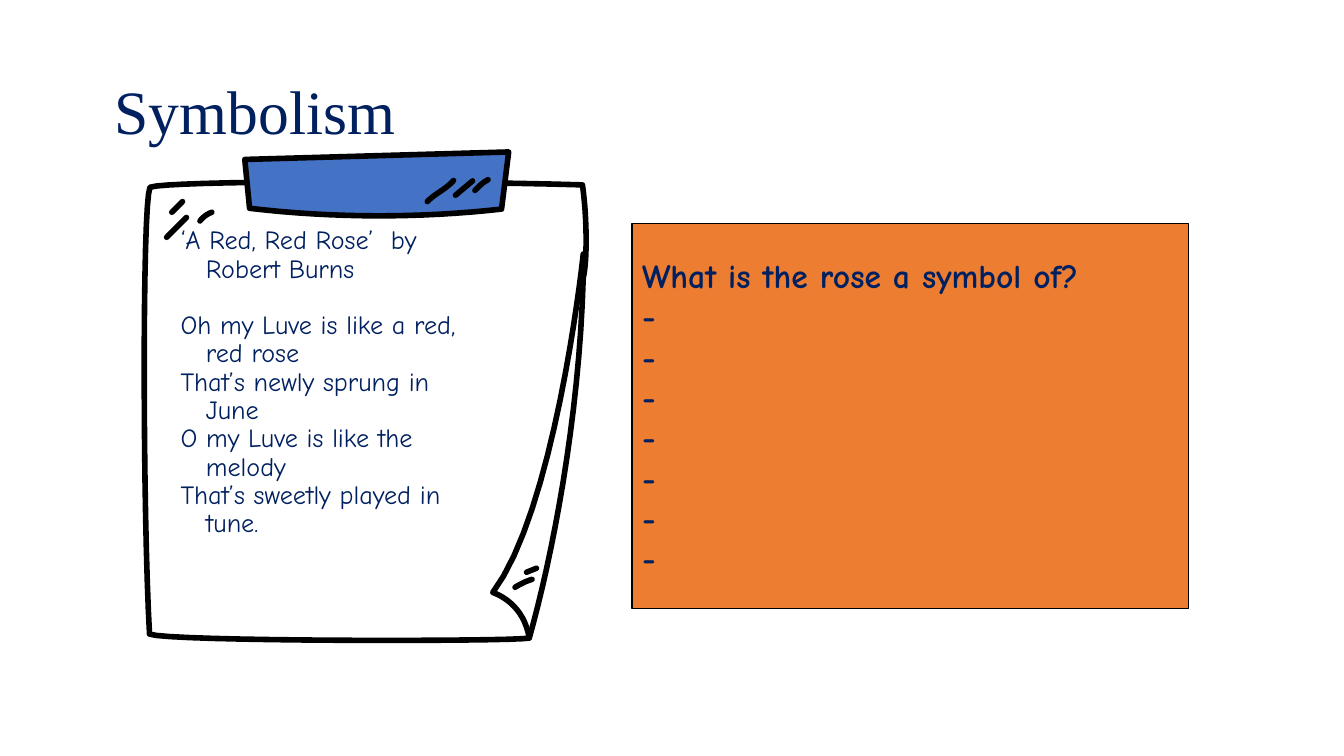
from lxml.etree import SubElement
from pptx import Presentation
from pptx.dml.color import RGBColor
from pptx.enum.shapes import MSO_SHAPE
from pptx.enum.text import MSO_ANCHOR, PP_ALIGN
from pptx.oxml.ns import qn
from pptx.util import Cm, Pt

NAVY = RGBColor(0x00, 0x20, 0x60)
BLUE = RGBColor(0x44, 0x72, 0xC4)
ORANGE = RGBColor(0xED, 0x7D, 0x31)
BLACK = RGBColor(0x00, 0x00, 0x00)

TITLE_FONT = "Times New Roman"
BODY_FONT = "Comic Neue"
CURVE_STEPS = 16
ANSWER_LINES = 7

POEM_HEADING = "‘A Red, Red Rose’  by Robert Burns"
POEM_LINES = [
    "Oh my Luve is like a red, red rose",
    "That’s newly sprung in June",
    "O my Luve is like the melody",
    "That’s sweetly played in tune.",
]

# Outlines in centimetres: a start point, then one end point per straight
# segment or two control points and an end point per curve.
PAPER = [
    (3.78, 4.72),
    [(3.58, 5.2), (3.6, 13), (3.77, 15.98)],
    [(4.2, 16.17), (12.9, 16.17), (13.34, 16.08)],
    [(13.9, 14.1), (14.6, 10.6), (14.7, 7)],
    [(14.8, 6.6), (14.8, 5.5), (14.68, 4.66)],
    [(11, 4.55), (4.2, 4.55), (3.78, 4.72)],
]
CURL = [
    (14.7, 6.4),
    [(14.65, 6.9), (13.95, 12.9), (12.42, 14.93)],
    [(12.6, 15), (13.2, 15.25), (13.34, 16.08)],
]
TAPE = [
    (6.17, 4.02),
    [(12.82, 3.83)],
    [(12.64, 5.27)],
    [(10.6, 5.5), (8.4, 5.5), (6.29, 5.25)],
]
GLINTS = [
    [(4.6, 5.08), [(4.33, 5.35)]],
    [(4.7, 5.48), [(4.2, 5.98)]],
    [(5.34, 5.35), [(5.2, 5.4), (5.1, 5.49), (5.04, 5.57)]],
    [(11.43, 4.55), [(11.2, 4.8), (11, 4.85), (10.77, 5.08)]],
    [(11.91, 4.56), [(11.48, 4.92)]],
    [(12.3, 4.53), [(12.15, 4.61), (12.08, 4.69), (11.97, 4.8)]],
    [(13.52, 14.32), [(13.27, 14.42)]],
    [(13.41, 14.6), [(13.25, 14.65), (13.15, 14.7), (12.98, 14.8)]],
]


def curve_points(start, controls):
    """Points along a cubic Bezier curve, without its start."""
    points = [start, *controls]
    weights = []
    for step in range(1, CURVE_STEPS + 1):
        t = step / CURVE_STEPS
        u = 1 - t
        weights.append((u**3, 3 * u * u * t, 3 * u * t * t, t**3))
    return [
        tuple(sum(w * point[axis] for w, point in zip(row, points)) for axis in (0, 1))
        for row in weights
    ]


def trace(outline):
    points = [outline[0]]
    for segment in outline[1:]:
        if len(segment) == 1:
            points += segment
        else:
            points += curve_points(points[-1], segment)
    return [(Cm(x), Cm(y)) for x, y in points]


def add_ink_outline(group, outline, fill=None, close=False):
    """Draw an outline with a thick, round-ended black pen."""
    start, *others = trace(outline)
    builder = group.shapes.build_freeform(*start)
    builder.add_line_segments(others, close=close)
    shape = builder.convert_to_shape()
    shape.shadow.inherit = False
    if fill is None:
        shape.fill.background()
    else:
        shape.fill.solid()
        shape.fill.fore_color.rgb = fill
    shape.line.color.rgb = BLACK
    shape.line.width = Pt(4)
    line = shape._element.spPr.find(qn("a:ln"))
    line.set("cap", "rnd")
    SubElement(line, qn("a:round"))


def add_note(slide):
    note = slide.shapes.add_group_shape()
    add_ink_outline(note, PAPER, close=True)
    add_ink_outline(note, CURL)
    add_ink_outline(note, TAPE, fill=BLUE, close=True)
    for glint in GLINTS:
        add_ink_outline(note, glint)


def add_text_box(slide, left, top, width, height, anchor=MSO_ANCHOR.TOP):
    text_frame = slide.shapes.add_textbox(left, top, width, height).text_frame
    text_frame.word_wrap = True
    text_frame.vertical_anchor = anchor
    text_frame.margin_left = text_frame.margin_right = Cm(0.25)
    text_frame.margin_top = text_frame.margin_bottom = Cm(0.25)
    return text_frame


def write_paragraph(text_frame, index, text, size, font=BODY_FONT, bold=False):
    paragraph = text_frame.paragraphs[0] if index == 0 else text_frame.add_paragraph()
    paragraph.alignment = PP_ALIGN.LEFT
    run = paragraph.add_run()
    run.text = text
    run.font.name = font
    run.font.size = Pt(size)
    run.font.bold = bold
    run.font.color.rgb = NAVY
    return paragraph


def add_title(slide):
    text_frame = add_text_box(
        slide, Cm(2.64), Cm(2), Cm(28.58), Cm(1.78), MSO_ANCHOR.MIDDLE
    )
    paragraph = write_paragraph(text_frame, 0, "Symbolism", 44, TITLE_FONT)
    paragraph.line_spacing = 0.9


def add_poem(slide):
    text_frame = add_text_box(slide, Cm(4.3), Cm(5.48), Cm(8.03), Cm(5.33))
    for index, text in enumerate([POEM_HEADING, *POEM_LINES]):
        paragraph = write_paragraph(text_frame, index, text, 18.7)
        paragraph.line_spacing = 0.9
        if index == 1:
            paragraph.space_before = Pt(20)
        properties = paragraph._p.get_or_add_pPr()
        properties.set("marL", str(Cm(0.64)))
        properties.set("indent", str(-Cm(0.64)))


def add_question(slide):
    box = slide.shapes.add_shape(
        MSO_SHAPE.RECTANGLE, Cm(15.93), Cm(5.64), Cm(14.02), Cm(9.7)
    )
    box.shadow.inherit = False
    box.fill.solid()
    box.fill.fore_color.rgb = ORANGE
    box.line.color.rgb = BLACK
    box.line.width = Pt(1)
    text_frame = box.text_frame
    text_frame.word_wrap = True
    text_frame.vertical_anchor = MSO_ANCHOR.MIDDLE
    lines = ["What is the rose a symbol of?"] + ["-"] * ANSWER_LINES
    for index, text in enumerate(lines):
        write_paragraph(text_frame, index, text, 24, bold=True)


def main():
    presentation = Presentation()
    presentation.slide_width = Cm(33.87)
    presentation.slide_height = Cm(19.05)
    slide = presentation.slides.add_slide(presentation.slide_layouts[6])
    add_title(slide)
    add_note(slide)
    add_poem(slide)
    add_question(slide)
    presentation.save("out.pptx")


if __name__ == "__main__":
    main()
